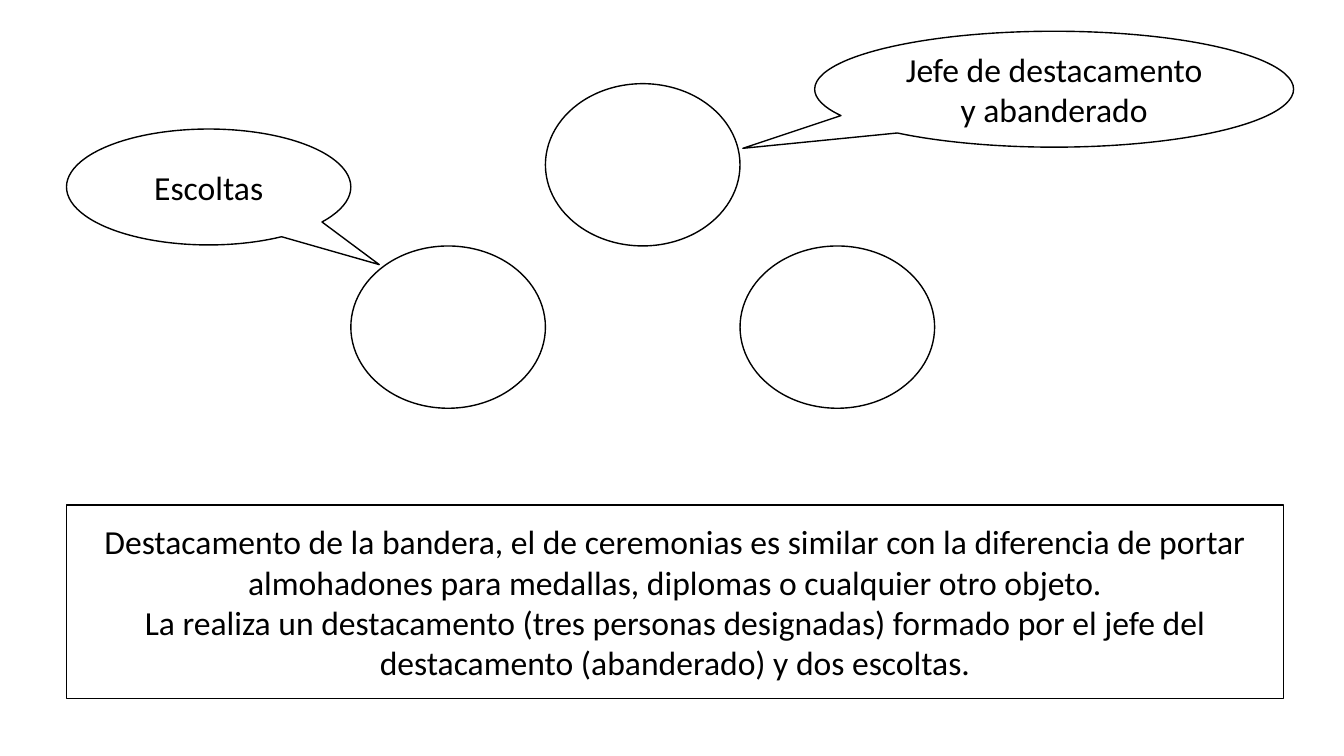
from pptx import Presentation
from pptx.dml.color import RGBColor
from pptx.enum.shapes import MSO_SHAPE
from pptx.enum.text import MSO_ANCHOR, PP_ALIGN
from pptx.util import Pt

PX = 9144  # 100 px to the inch
OVAL = MSO_SHAPE.OVAL
BOX = MSO_SHAPE.RECTANGLE
CALLOUT = MSO_SHAPE.OVAL_CALLOUT
MIDDLE = MSO_ANCHOR.MIDDLE
CENTER = PP_ALIGN.CENTER


def color(hex_code):
    return RGBColor.from_string(hex_code)


TEXT_FORMAT = {"name": "Calibri", "size": Pt(24), "bold": False}


def add_outlined(kind, left, top, width, height, paragraphs=()):
    """Add a white shape with a black outline and centred text."""
    shape = slide.shapes.add_shape(
        kind, left * PX, top * PX, width * PX, height * PX)
    shape.shadow.inherit = False
    shape.fill.solid()
    shape.fill.fore_color.rgb = color("FFFFFF")
    shape.line.color.rgb = color("000000")
    shape.line.width = Pt(1)
    frame = shape.text_frame
    frame.word_wrap = True
    frame.vertical_anchor = MIDDLE
    for index, text in enumerate(paragraphs):
        paragraph = frame.add_paragraph() if index else frame.paragraphs[0]
        paragraph.text = text
        paragraph.alignment = CENTER
        for attribute, value in TEXT_FORMAT.items():
            setattr(paragraph.font, attribute, value)
        paragraph.font.color.rgb = color("000000")
    return shape


prs = Presentation()
prs.slide_width = 1333 * PX
prs.slide_height = 750 * PX
slide = prs.slides.add_slide(prs.slide_layouts[6])

# Formation: the leader in front, one escort behind on each side
PERSON_WIDTH, PERSON_HEIGHT = 193, 161
LEADER_LEFT, LEADER_TOP = 541, 83
for column, row in [(0, 0), (1, 1), (-1, 1)]:
    add_outlined(OVAL, LEADER_LEFT + column * PERSON_WIDTH,
                 LEADER_TOP + row * PERSON_HEIGHT, PERSON_WIDTH, PERSON_HEIGHT)

add_outlined(BOX, 66, 501, 1207, 192, [
    "Destacamento de la bandera, el de ceremonias es similar con la diferencia "
    "de portar almohadones para medallas, diplomas o cualquier otro objeto.",
    "La realiza un destacamento (tres personas designadas) formado por el jefe "
    "del destacamento (abanderado) y dos escoltas.",
])

ROLES = [
    ("Jefe de destacamento y abanderado", 808, 31, 475, (-0.65, 0.51)),
    ("Escoltas", 66, 128, 282, (0.6, 0.67)),
]
for role, left, top, width, pointer in ROLES:
    callout = add_outlined(CALLOUT, left, top, width, 115, [role])
    for index, offset in enumerate(pointer):
        callout.adjustments[index] = offset

prs.save("out.pptx")
